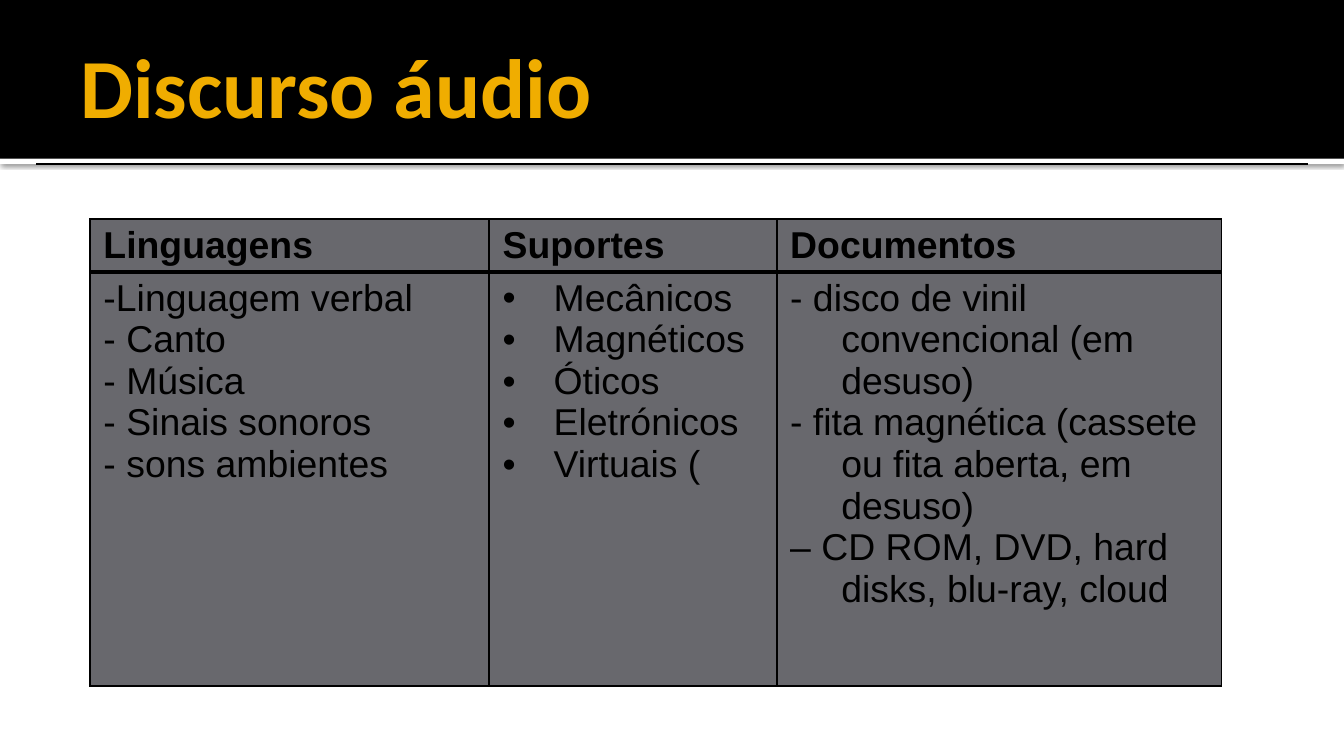
from dataclasses import dataclass

from lxml.etree import SubElement
from pptx import Presentation
from pptx.dml.color import RGBColor
from pptx.enum.shapes import MSO_CONNECTOR, MSO_SHAPE
from pptx.enum.text import MSO_ANCHOR, PP_ALIGN
from pptx.oxml.ns import qn
from pptx.util import Inches, Pt

BLACK = RGBColor(0x00, 0x00, 0x00)
WHITE = RGBColor(0xFF, 0xFF, 0xFF)
GOLD = RGBColor(0xF0, 0xAD, 0x00)
GRAY = RGBColor(0x68, 0x68, 0x6D)

SLIDE_WIDTH = 10
SLIDE_HEIGHT = SLIDE_WIDTH * 9 / 16
HEADER_HEIGHT = 1.18
ROW_HEIGHTS = (0.38, 3.08)
INDENT = Inches(0.38)


@dataclass
class Column:
    heading: str
    width: float
    items: list[str]
    heading_align: PP_ALIGN = PP_ALIGN.LEFT
    item_align: PP_ALIGN = PP_ALIGN.JUSTIFY
    bullet: str = ""


COLUMNS = [
    Column("Linguagens", 2.97,
           ["-Linguagem verbal", "- Canto", "- Música", "- Sinais sonoros",
            "- sons ambientes"]),
    Column("Suportes", 2.14,
           ["Mecânicos", "Magnéticos", "Óticos", "Eletrónicos", "Virtuais ("],
           heading_align=PP_ALIGN.JUSTIFY, bullet="•"),
    Column("Documentos", 3.31,
           ["- disco de vinil convencional (em desuso)",
            "- fita magnética (cassete ou fita aberta, em desuso)",
            "– CD ROM, DVD, hard disks, blu-ray, cloud"],
           item_align=PP_ALIGN.LEFT),
]


def add_band(slide, top: float, height: float, color: RGBColor):
    """Add a full-width bar without outline or shadow."""
    sp = slide.shapes.add_shape(MSO_SHAPE.RECTANGLE, 0, Inches(top),
                                Inches(SLIDE_WIDTH), Inches(height))
    sp.shadow.inherit = False
    sp.fill.solid()
    sp.fill.fore_color.rgb = color
    sp.line.fill.background()
    return sp


def add_drop_shadow(sp) -> None:
    effects = sp._element.spPr.find(qn("a:effectLst"))
    shadow = SubElement(effects, qn("a:outerShdw"), blurRad=str(Pt(2.5)),
                        dist=str(Pt(0.8)), dir=str(90 * 60000),
                        algn="t", rotWithShape="0")
    color = SubElement(shadow, qn("a:srgbClr"), val=str(BLACK))
    SubElement(color, qn("a:alpha"), val="60000")


def add_title(slide, text: str) -> None:
    box = slide.shapes.add_textbox(Inches(0.5), Inches(0.1), Inches(8.25), Inches(1.06))
    tf = box.text_frame
    tf.word_wrap = True
    tf.vertical_anchor = MSO_ANCHOR.MIDDLE
    tf.margin_left = Inches(0.1)
    tf.margin_right = tf.margin_top = tf.margin_bottom = Inches(0.05)
    tf.text = text
    font = tf.paragraphs[0].runs[0].font
    font.name, font.size, font.bold = "Calibri", Pt(45), True
    font.color.rgb = GOLD


def set_borders(cell, top: float, bottom: float) -> None:
    """Draw black cell borders; the sides are always 1 pt wide."""
    tc_pr = cell._tc.get_or_add_tcPr()
    for side, width in (("L", 1), ("R", 1), ("T", top), ("B", bottom)):
        ln = SubElement(tc_pr, qn(f"a:ln{side}"), w=str(Pt(width)))
        fill = SubElement(ln, qn("a:solidFill"))
        SubElement(fill, qn("a:srgbClr"), val=str(BLACK))


def fill_cell(cell, lines: list[str], align: PP_ALIGN, bold: bool = False,
              bullet: str = "", margin_bottom: float = 0.04) -> None:
    cell.fill.solid()
    cell.fill.fore_color.rgb = GRAY
    cell.margin_left = cell.margin_right = Inches(0.1)
    cell.margin_top = Inches(0.04)
    cell.margin_bottom = Inches(margin_bottom)
    cell.text_frame.text = "\n".join(lines)
    for p in cell.text_frame.paragraphs:
        p.alignment = align
        p_pr = p._p.get_or_add_pPr()
        p_pr.set("marL", str(INDENT))
        p_pr.set("indent", str(-INDENT))
        if bullet:
            SubElement(p_pr, qn("a:buFont"), typeface="Arial")
            SubElement(p_pr, qn("a:buChar"), char=bullet)
        else:
            SubElement(p_pr, qn("a:buNone"))
        font = p.runs[0].font
        font.name, font.size, font.bold = "Arial", Pt(20), bold
        font.color.rgb = BLACK


def add_audio_table(slide, columns: list[Column]) -> None:
    width = sum(column.width for column in columns)
    table = slide.shapes.add_table(
        len(ROW_HEIGHTS), len(columns), Inches(0.67), Inches(1.63),
        Inches(width), Inches(sum(ROW_HEIGHTS))).table
    table.horz_banding = False
    for row, height in zip(table.rows, ROW_HEIGHTS):
        row.height = Inches(height)
    for i, column in enumerate(columns):
        table.columns[i].width = Inches(column.width)
        heading, body = table.cell(0, i), table.cell(1, i)
        set_borders(heading, top=1, bottom=2)
        set_borders(body, top=2, bottom=1)
        fill_cell(heading, [column.heading], column.heading_align, bold=True,
                  margin_bottom=0.02)
        fill_cell(body, column.items, column.item_align, bullet=column.bullet)


def add_rule(slide) -> None:
    y = Inches(1.22)
    line = slide.shapes.add_connector(MSO_CONNECTOR.STRAIGHT, Inches(0.27), y,
                                      Inches(9.73), y)
    line.line.color.rgb = BLACK
    line.line.width = Pt(0.75)
    SubElement(line._element.spPr, qn("a:effectLst"))


def main() -> None:
    prs = Presentation()
    prs.slide_width, prs.slide_height = Inches(SLIDE_WIDTH), Inches(SLIDE_HEIGHT)
    s = prs.slides.add_slide(prs.slide_layouts[6])
    add_drop_shadow(add_band(s, HEADER_HEIGHT, 0.04, WHITE))
    add_band(s, 0, HEADER_HEIGHT, BLACK)
    add_title(s, "Discurso áudio")
    add_audio_table(s, COLUMNS)
    add_rule(s)
    prs.save("out.pptx")


if __name__ == "__main__":
    main()
